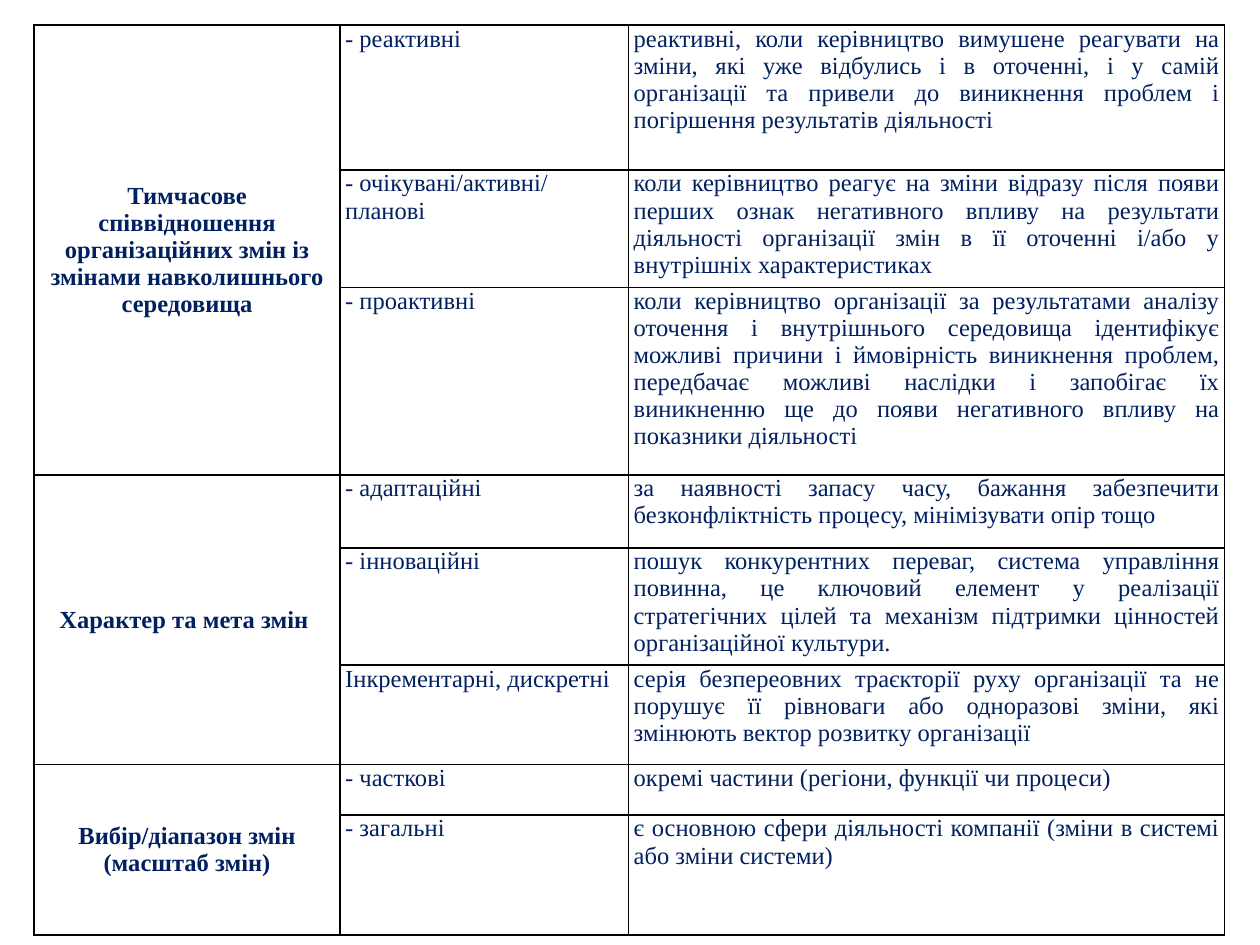
from dataclasses import dataclass

from lxml import etree
from pptx import Presentation
from pptx.dml.color import RGBColor
from pptx.enum.text import MSO_ANCHOR, PP_ALIGN
from pptx.oxml.ns import qn
from pptx.util import Inches, Pt

LEFT, CENTER, JUSTIFY = PP_ALIGN.LEFT, PP_ALIGN.CENTER, PP_ALIGN.JUSTIFY
TOP, MIDDLE = MSO_ANCHOR.TOP, MSO_ANCHOR.MIDDLE


@dataclass(frozen=True)
class Theme:
    font: str = "Times New Roman"
    size: int = 14
    text: str = "002060"
    fill: str = "FFFFFF"
    border: str = "000000"
    border_width: int = 1
    side_margin: float = 0.04


THEME = Theme()
SLIDE_SIZE = (10, 7.5)
TABLE_ORIGIN = (0.27, 0.2)
COLUMNS = [2.43, 2.29, 4.73]
ROWS = [1.15, 0.93, 1.49, 0.58, 0.93, 0.79, 0.4, 0.95]

GROUPS = [
    ("Тимчасове співвідношення організаційних змін із змінами навколишнього середовища", [
        ("- реактивні",
         "реактивні, коли керівництво вимушене реагувати на зміни, які уже відбулись "
         "і в оточенні, і у самій організації та привели до виникнення проблем "
         "і погіршення результатів діяльності"),
        ("- очікувані/активні/ планові",
         "коли керівництво реагує на зміни відразу після появи перших ознак негативного "
         "впливу на результати діяльності організації змін в її оточенні і/або "
         "у внутрішніх характеристиках"),
        ("- проактивні",
         "коли керівництво організації за результатами аналізу оточення і внутрішнього "
         "середовища ідентифікує можливі причини і ймовірність виникнення проблем, "
         "передбачає можливі наслідки і запобігає їх виникненню ще до появи негативного "
         "впливу на показники діяльності"),
    ]),
    ("Характер та мета змін ", [
        ("- адаптаційні",
         "за наявності запасу часу, бажання забезпечити безконфліктність процесу, "
         "мінімізувати опір тощо"),
        ("- інноваційні",
         "пошук конкурентних переваг, система управління повинна, це ключовий елемент "
         "у реалізації стратегічних цілей та механізм підтримки цінностей "
         "організаційної культури."),
        ("Інкрементарні, дискретні",
         "серія безпереовних траєкторії руху організації та не порушує її рівноваги "
         "або одноразові зміни, які змінюють вектор розвитку організації"),
    ]),
    ("Вибір/діапазон змін (масштаб змін)", [
        ("- часткові", "окремі частини (регіони, функції чи процеси)"),
        ("- загальні",
         "є основною сфери діяльності компанії (зміни в системі або зміни системи)"),
    ]),
]


def add_borders(cell):
    tc_pr = cell._tc.get_or_add_tcPr()
    for side in ("lnL", "lnR", "lnT", "lnB"):
        ln = etree.SubElement(tc_pr, qn(f"a:{side}"), w=str(Pt(THEME.border_width)))
        fill = etree.SubElement(ln, qn("a:solidFill"))
        etree.SubElement(fill, qn("a:srgbClr"), val=THEME.border)


def style_cell(cell):
    add_borders(cell)
    cell.fill.solid()
    cell.fill.fore_color.rgb = RGBColor.from_string(THEME.fill)
    cell.margin_left = cell.margin_right = Inches(THEME.side_margin)
    cell.margin_top = cell.margin_bottom = 0


def write_cell(cell, text, align, anchor=TOP, bold=False):
    cell.vertical_anchor = anchor
    p = cell.text_frame.paragraphs[0]
    p.alignment = align
    r = p.add_run()
    r.text = text
    r.font.name = THEME.font
    r.font.size = Pt(THEME.size)
    r.font.bold = bold
    r.font.color.rgb = RGBColor.from_string(THEME.text)


def add_grid(s):
    box = (*TABLE_ORIGIN, sum(COLUMNS), sum(ROWS))
    table = s.shapes.add_table(len(ROWS), len(COLUMNS), *map(Inches, box)).table
    table.first_row = table.horz_banding = False
    for column, width in zip(table.columns, COLUMNS):
        column.width = Inches(width)
    for row, height in zip(table.rows, ROWS):
        row.height = Inches(height)
    for cell in table.iter_cells():
        style_cell(cell)
    return table


def fill_groups(table):
    row = 0
    for heading, kinds in GROUPS:
        first = table.cell(row, 0)
        first.merge(table.cell(row + len(kinds) - 1, 0))
        write_cell(first, heading, CENTER, MIDDLE, bold=True)
        for kind, description in kinds:
            write_cell(table.cell(row, 1), kind, LEFT)
            write_cell(table.cell(row, 2), description, JUSTIFY)
            row += 1


def main():
    prs = Presentation()
    prs.slide_width, prs.slide_height = map(Inches, SLIDE_SIZE)
    s = prs.slides.add_slide(prs.slide_layouts[6])
    fill_groups(add_grid(s))
    prs.save("out.pptx")


if __name__ == "__main__":
    main()
